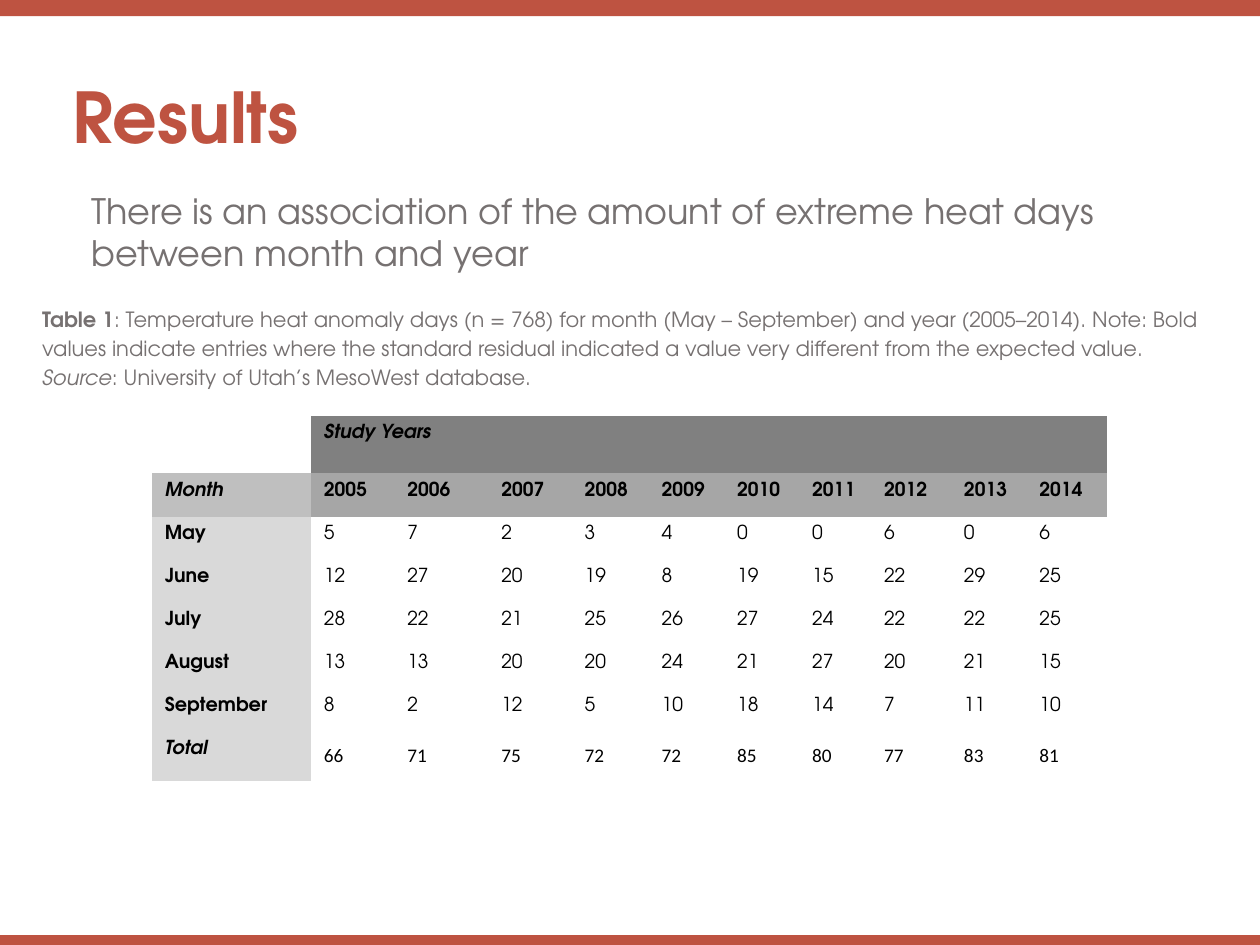
from pptx import Presentation
from pptx.dml.color import RGBColor
from pptx.enum import shapes, text
from pptx.util import Pt

RUST = RGBColor(0xBE, 0x53, 0x41)
GRAY = RGBColor(0x76, 0x71, 0x71)
BLACK = RGBColor(0, 0, 0)
YEARS_FILL = RGBColor(0x80, 0x80, 0x80)
YEAR_FILL = RGBColor(0xA6, 0xA6, 0xA6)
MONTH_FILL = RGBColor(0xBF, 0xBF, 0xBF)
LABEL_FILL = RGBColor(0xD9, 0xD9, 0xD9)
FONT = "TeX Gyre Adventor"
PLAIN_TABLE = "{2D5ABB26-0587-4C30-8999-92F81FD0307C}"

STATEMENT = ("There is an association of the amount of extreme heat days "
             "between month and year")
CAPTION = [
    ("Table 1", {"bold": True}),
    (": Temperature heat anomaly days (n = 768) for month (May – September) "
     "and year (2005–2014). Note: Bold values indicate entries where the "
     "standard residual indicated a value very different from the expected "
     "value. ", {}),
    ("Source", {"italic": True}),
    (": University of Utah’s MesoWest database.", {}),
]
HEAT_DAYS = {
    "May": [5, 7, 2, 3, 4, 0, 0, 6, 0, 6],
    "June": [12, 27, 20, 19, 8, 19, 15, 22, 29, 25],
    "July": [28, 22, 21, 25, 26, 27, 24, 22, 22, 25],
    "August": [13, 13, 20, 20, 24, 21, 27, 20, 21, 15],
    "September": [8, 2, 12, 5, 10, 18, 14, 7, 11, 10],
    "Total": [66, 71, 75, 72, 72, 85, 80, 77, 83, 81],
}
COLUMN_WIDTHS = [90.9, 47.7, 53.7, 47.7, 44, 43.1, 42.9, 41.1, 45.7, 43.1, 45.7]
ROW_HEIGHTS = [31] + [24.6] * 6 + [28.2]


def apply(target, values):
    for name, value in values.items():
        setattr(target, name, value)


def add_span(para, words, size, color, **extra):
    span = para.add_run()
    span.text = words
    span.font.color.rgb = color
    apply(span.font, {"name": FONT, "size": Pt(size), "bold": False,
                      "italic": False, **extra})


def set_frame(frame, inset, anchor):
    apply(frame, {"word_wrap": True, "auto_size": text.MSO_AUTO_SIZE.NONE,
                  "vertical_anchor": anchor,
                  "margin_left": Pt(7.2), "margin_right": Pt(7.2),
                  "margin_top": Pt(inset), "margin_bottom": Pt(inset)})


def add_bar(page, left, top, width, height):
    bar = page.shapes.add_shape(shapes.MSO_SHAPE.RECTANGLE,
                                Pt(left), Pt(top), Pt(width), Pt(height))
    bar.shadow.inherit = False
    bar.fill.solid()
    bar.fill.fore_color.rgb = RUST
    bar.line.fill.background()


def place_title(page, left, top, width, height):
    title = page.shapes.title
    apply(title, {"left": Pt(left), "top": Pt(top),
                  "width": Pt(width), "height": Pt(height)})
    set_frame(title.text_frame, 3.6, text.MSO_ANCHOR.BOTTOM)
    para = title.text_frame.paragraphs[0]
    apply(para, {"alignment": text.PP_ALIGN.LEFT, "line_spacing": 0.9})
    add_span(para, "Results", 40, RUST, bold=True)


def add_text(page, left, top, width, height, spans, size, anchor, spacing):
    box = page.shapes.add_textbox(Pt(left), Pt(top), Pt(width), Pt(height))
    set_frame(box.text_frame, 7.2, anchor)
    para = box.text_frame.paragraphs[0]
    para.line_spacing = spacing
    for words, extra in spans:
        add_span(para, words, size, GRAY, **extra)


def fill_cell(cell, words, fill=None, **extra):
    apply(cell, {"margin_left": Pt(7.2), "margin_right": Pt(7.2),
                 "margin_top": Pt(5), "margin_bottom": Pt(6)})
    if fill is None:
        cell.fill.background()
    else:
        cell.fill.solid()
        cell.fill.fore_color.rgb = fill
    if words:
        add_span(cell.text_frame.paragraphs[0], words, 11, BLACK, **extra)


def add_heat_table(page, left, top):
    frame = page.shapes.add_table(
        len(ROW_HEIGHTS), len(COLUMN_WIDTHS), Pt(left), Pt(top),
        Pt(sum(COLUMN_WIDTHS)), Pt(sum(ROW_HEIGHTS)))
    table = frame.table
    apply(table, {"first_row": False, "horz_banding": False})
    table._tbl.tblPr[0].text = PLAIN_TABLE
    for column, width in zip(table.columns, COLUMN_WIDTHS):
        column.width = Pt(width)
    for row, height in zip(table.rows, ROW_HEIGHTS):
        row.height = Pt(height)

    fill_cell(table.cell(0, 0), "")
    table.cell(0, 1).merge(table.cell(0, len(COLUMN_WIDTHS) - 1))
    fill_cell(table.cell(0, 1), "Study Years", YEARS_FILL, bold=True, italic=True)
    fill_cell(table.cell(1, 0), "Month", MONTH_FILL, bold=True, italic=True)
    for col, year in enumerate(range(2005, 2015), 1):
        fill_cell(table.cell(1, col), str(year), YEAR_FILL, bold=True)

    for row, (label, counts) in enumerate(HEAT_DAYS.items(), 2):
        is_total = label == "Total"
        fill_cell(table.cell(row, 0), label, LABEL_FILL, bold=True, italic=is_total)
        for col, count in enumerate(counts, 1):
            cell = table.cell(row, col)
            fill_cell(cell, str(count), name="Calibri" if is_total else FONT)
            if is_total:
                apply(cell, {"vertical_anchor": text.MSO_ANCHOR.BOTTOM,
                             "margin_bottom": Pt(7.2)})


def build_results(page):
    add_bar(page, 0, 0, 720, 9.2)
    add_bar(page, 0, 534.3, 720, 5.7)
    place_title(page, 34, 39, 281, 55.4)
    add_heat_table(page, 87, 237.6)
    add_text(page, 45.2, 101, 614, 44, [(STATEMENT, {})], 20,
             text.MSO_ANCHOR.TOP, 1)
    add_text(page, 17, 150.5, 686, 94.3, CAPTION, 12,
             text.MSO_ANCHOR.MIDDLE, 1.15)


def main():
    deck = Presentation()
    apply(deck, {"slide_width": Pt(720), "slide_height": Pt(540)})
    build_results(deck.slides.add_slide(deck.slide_layouts[5]))
    deck.save("out.pptx")


if __name__ == "__main__":
    main()
